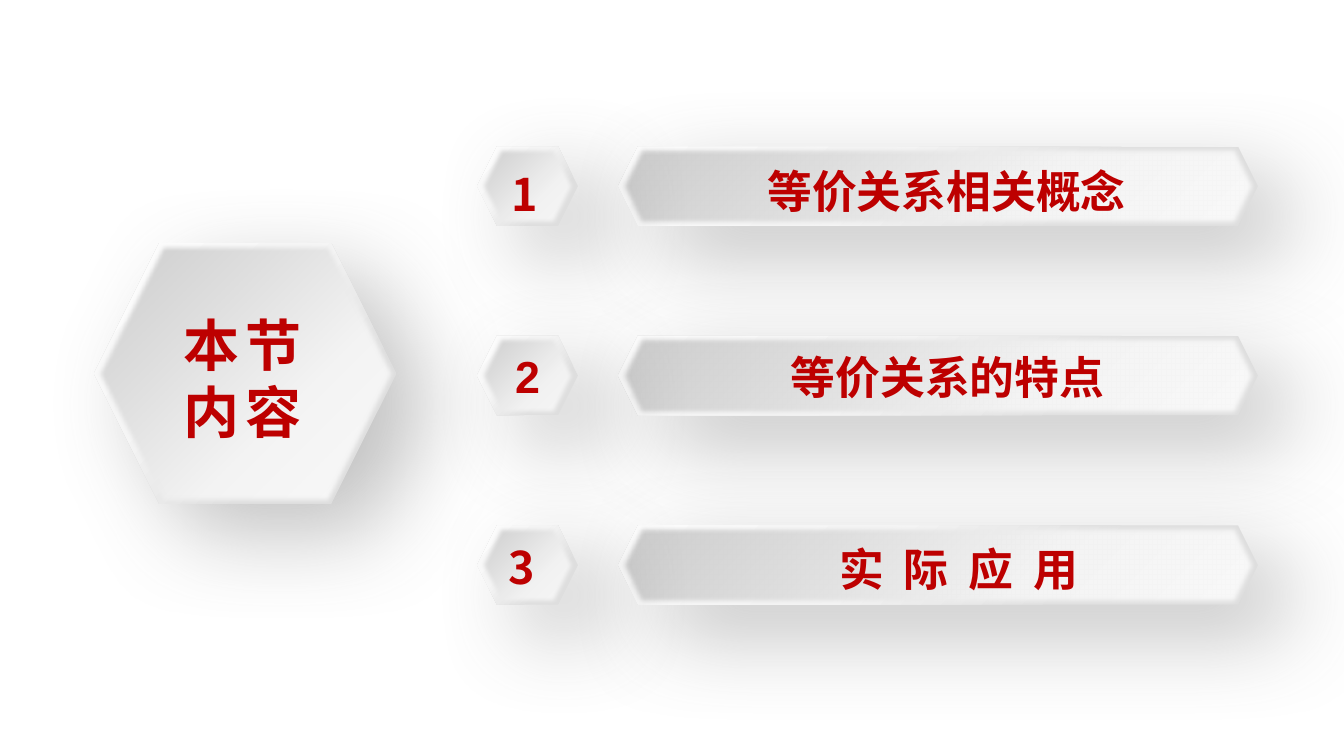
"""Build the section contents slide with a title hexagon and three numbered bars."""
from lxml.etree import SubElement
from pptx import Presentation
from pptx.dml.color import RGBColor
from pptx.enum.shapes import MSO_SHAPE as Preset
from pptx.enum.text import MSO_ANCHOR as Anchor, PP_ALIGN as Align
from pptx.oxml.ns import qn
from pptx.util import Pt

SANS, LATIN = "Noto Sans CJK SC", "Arial"
COLORS = {"text": "BD0000", "shadow": "696969"}
RIM = {"angle": 225, "stops": [(1, "DEDEDE"), (30, "E0E0E0"), (61, "F6F6F6"), (100, "FFFFFF")]}
FACE = {"angle": 45, "stops": [(0, "CBCBCB"), (32, "DEDEDE"), (64, "F3F3F3"), (100, "F9F9F9")]}
SHADOW = {"blurRad": Pt(49), "dist": Pt(25), "dir": 40 * 60000, "algn": "tl", "rotWithShape": 0}
SOFT_EDGE = 2.5

HEADING = ["本节", "内容"]
HEADING_HEXAGON = (50.4, 130.3, 162, 139.7)
HEADING_BOX = (91.4, 162.7, 81.4, 79.9)
TOPICS = [
    {"number": "1", "number_at": (274, 10.8), "title": "等价关系相关概念",
     "title_at": (411.1, 9.3, 206), "align": Align.LEFT, "spacing": 0},
    {"number": "2", "number_at": None, "title": "等价关系的特点",
     "title_at": (360.7, 7.2, 293.8), "align": Align.CENTER, "spacing": 0},
    {"number": "3", "number_at": (272.5, 7.9), "title": "实际应用",
     "title_at": (378.4, 8.6, 270.7), "align": Align.CENTER, "spacing": 10.8},
]
FIRST_TOP, PITCH, BAR_HEIGHT = 78.5, 101.5, 42.5
BADGE_LEFT, BADGE_WIDTH = 255.6, 54
BAR_LEFT, BAR_WIDTH = 331.2, 342.7
LINE_HEIGHT = 29


def add_element(parent, tag, **attributes):
    return SubElement(parent, qn(tag), {key: str(value) for key, value in attributes.items()})


def add_layer(slide, bounds, gradient):
    hexagon = slide.shapes.add_shape(Preset.HEXAGON, *map(Pt, bounds))
    properties = hexagon._element.spPr
    fill = add_element(properties, "a:gradFill", rotWithShape=1)
    stops = add_element(fill, "a:gsLst")
    for position, color in gradient["stops"]:
        stop = add_element(stops, "a:gs", pos=position * 1000)
        add_element(stop, "a:srgbClr", val=color)
    add_element(fill, "a:lin", ang=gradient["angle"] * 60000, scaled=0)
    hexagon.line.fill.background()
    effects = add_element(properties, "a:effectLst")
    if gradient is RIM:
        shadow = add_element(effects, "a:outerShdw", **SHADOW)
        tint = add_element(shadow, "a:srgbClr", val=COLORS["shadow"])
        add_element(tint, "a:alpha", val=40000)
    else:
        add_element(effects, "a:softEdge", rad=Pt(SOFT_EDGE))
    return hexagon


def add_raised_hexagon(slide, bounds):
    add_layer(slide, bounds, RIM)
    return add_layer(slide, bounds, FACE)


def write(frame, lines, frame_format, size=24, font_name=SANS, align=Align.LEFT, spacing=0):
    for key, value in frame_format.items():
        setattr(frame, key, value)
    for index, line in enumerate(lines):
        paragraph = frame.add_paragraph() if index else frame.paragraphs[0]
        paragraph.alignment = align
        run = paragraph.add_run()
        run.text = line
        for key, value in {"name": font_name, "size": Pt(size), "bold": True}.items():
            setattr(run.font, key, value)
        run.font.color.rgb = RGBColor.from_string(COLORS["text"])
        run_properties = run._r.get_or_add_rPr()
        add_element(run_properties, "a:ea", typeface=font_name)
        if spacing:
            run_properties.set("spc", str(round(spacing * 100)))


def add_label(slide, bounds, text, **style):
    label = slide.shapes.add_textbox(*map(Pt, bounds))
    margins = dict.fromkeys(("margin_left", "margin_top", "margin_right", "margin_bottom"), 0)
    write(label.text_frame, [text], {"word_wrap": True, **margins}, **style)


def add_topic(slide, topic, top):
    add_raised_hexagon(slide, (BAR_LEFT, top, BAR_WIDTH, BAR_HEIGHT))
    left, offset, width = topic["title_at"]
    add_label(slide, (left, top + offset, width, LINE_HEIGHT), topic["title"],
              align=topic["align"], spacing=topic["spacing"])
    badge = add_raised_hexagon(slide, (BADGE_LEFT, top, BADGE_WIDTH, BAR_HEIGHT))
    if topic["number_at"]:
        left, offset = topic["number_at"]
        add_label(slide, (left, top + offset, 33.5, LINE_HEIGHT), topic["number"])
    else:
        write(badge.text_frame, [topic["number"]],
              {"vertical_anchor": Anchor.MIDDLE, "margin_left": Pt(5), "margin_right": Pt(5),
               "margin_top": Pt(3), "margin_bottom": Pt(3)},
              font_name=LATIN, align=Align.CENTER)


def main():
    deck = Presentation()
    deck.slide_width, deck.slide_height = Pt(720), Pt(405)
    slide = deck.slides.add_slide(deck.slide_layouts[6])
    add_raised_hexagon(slide, HEADING_HEXAGON)
    heading = slide.shapes.add_textbox(*map(Pt, HEADING_BOX))
    write(heading.text_frame, HEADING, {"word_wrap": False}, size=30, spacing=3)
    for row, topic in enumerate(TOPICS):
        add_topic(slide, topic, FIRST_TOP + row * PITCH)
    deck.save("out.pptx")


if __name__ == "__main__":
    main()
